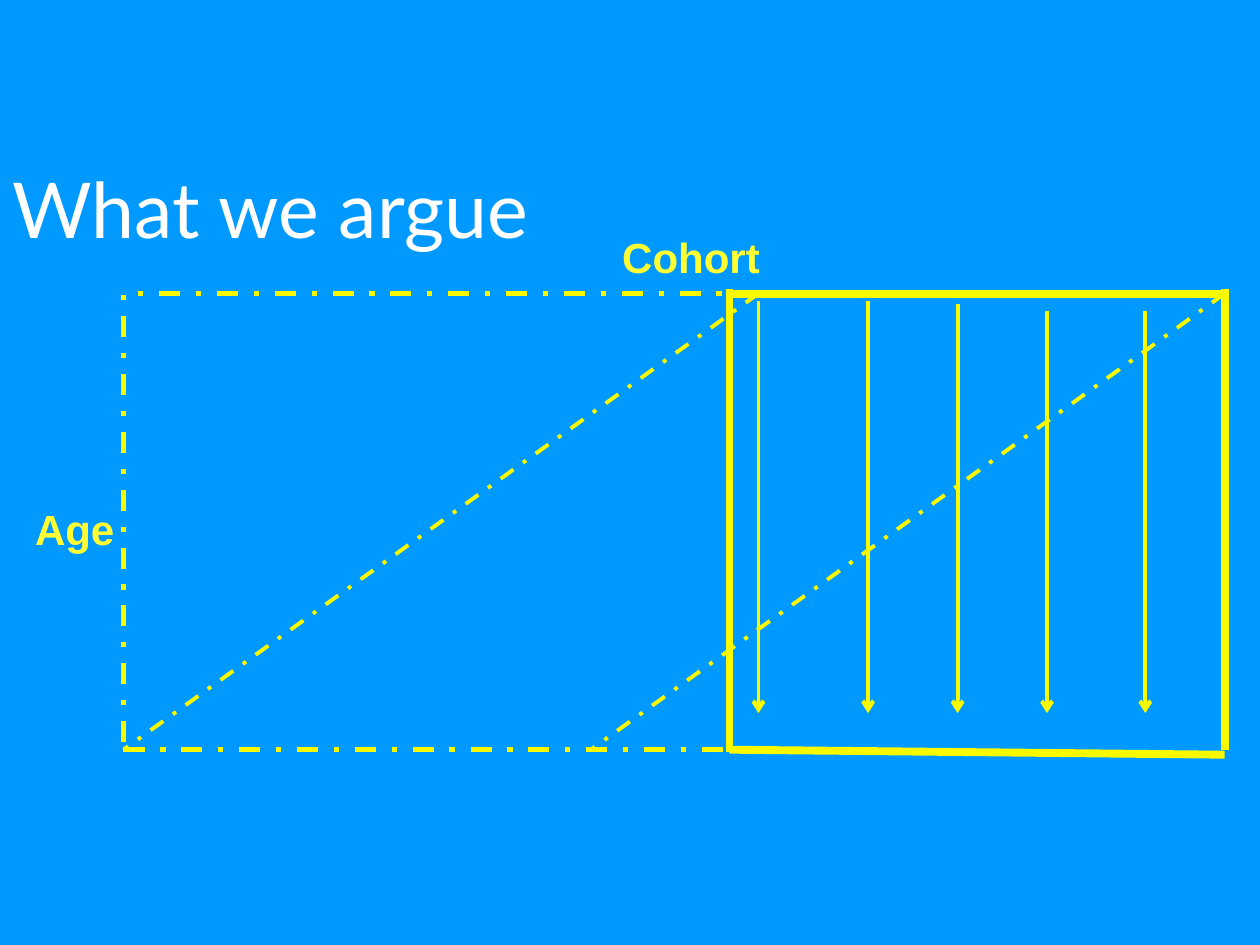
import pptx
import pptx.util
import pptx.dml.color
import pptx.enum.dml
import pptx.enum.text
import pptx.oxml

Inches, Pt = pptx.util.Inches, pptx.util.Pt
Dash = pptx.enum.dml.MSO_LINE
Text = pptx.enum.text

SKY, GOLD, LEMON, WHITE = "0099FF", "F9F900", "FFFF33", "FFFFFF"
LEFT, START, MID, EDGE, RIGHT = 0.98, 4.69, 5.79, 6.02, 9.72
TOP, BASE, TIP = 2.33, 5.95, 5.66

TITLE = "What we argue"
LABELS = [("Age", (0.18, 3.95, 0.84, 0.5)), ("Cohort", (4.84, 1.79, 1.3, 0.5))]
SLOPES = [(EDGE, TOP, LEFT, BASE), (RIGHT, TOP, START, BASE)]
DASHED = [(LEFT, BASE, MID, BASE), (EDGE, TOP, LEFT, TOP), (LEFT, 5.89, LEFT, TOP)]
FRAME = [
    (MID, TOP, RIGHT, TOP),
    (RIGHT, 5.99, MID, BASE),
    (RIGHT, BASE, RIGHT, 2.29),
    (MID, 5.97, MID, 2.29),
]
ARROWS = [(EDGE, 2.39), (6.89, 2.39), (7.6, 2.41), (8.31, 2.47), (9.09, 2.47)]


def tint(code):
    """Return the colour for a hex string."""
    return pptx.dml.color.RGBColor.from_string(code)


def write(shape, text, box, size, font, color, bold=False, wrap=True):
    """Place a shape and fill it with formatted text."""
    shape.left, shape.top, shape.width, shape.height = map(Inches, box)
    frame = shape.text_frame
    frame.text = text
    frame.word_wrap = wrap
    frame.auto_size = Text.MSO_AUTO_SIZE.SHAPE_TO_FIT_TEXT
    frame.vertical_anchor = Text.MSO_ANCHOR.TOP
    para = frame.paragraphs[0]
    para.alignment = Text.PP_ALIGN.LEFT
    face = para.runs[0].font
    face.size, face.name, face.bold = Pt(size), font, bold
    face.color.rgb = tint(color)


def draw(slide, ends, width, dash=None, arrow=False):
    """Draw a straight line between two points."""
    line = slide.shapes.add_connector(
        pptx.enum.shapes.MSO_CONNECTOR.STRAIGHT, *map(Inches, ends))
    line.line.color.rgb = tint(GOLD)
    line.line.width = Pt(width)
    if dash:
        line.line.dash_style = dash
    props = line._element.spPr
    space = pptx.oxml.ns.nsdecls("a")
    if arrow:
        head = pptx.oxml.parse_xml(f'<a:tailEnd {space} type="arrow"/>')
        line.line._get_or_add_ln().append(head)
    props.append(pptx.oxml.parse_xml(f"<a:effectLst {space}/>"))


def main():
    """Build and save the slide."""
    deck = pptx.Presentation()
    deck.slide_width, deck.slide_height = Inches(10), Inches(7.5)
    slide = deck.slides.add_slide(deck.slide_layouts[5])
    fill = slide.background.fill
    fill.solid()
    fill.fore_color.rgb = tint(SKY)

    write(slide.shapes.title, TITLE, (0, 1.23, 10, 0.84), 44, "Lato", WHITE)
    for ends in SLOPES:
        draw(slide, ends, 2.25, Dash.DASH_DOT)
    for ends in DASHED:
        draw(slide, ends, 3, Dash.DASH_DOT)
    for ends in FRAME:
        draw(slide, ends, 4.5)
    for x, y in ARROWS:
        draw(slide, (x, y, x, TIP), 2.25, arrow=True)
    for text, box in LABELS:
        shape = slide.shapes.add_textbox(*map(Inches, box))
        write(shape, text, box, 24, "Arial", LEMON, bold=True, wrap=False)
    deck.save("out.pptx")


if __name__ == "__main__":
    main()
